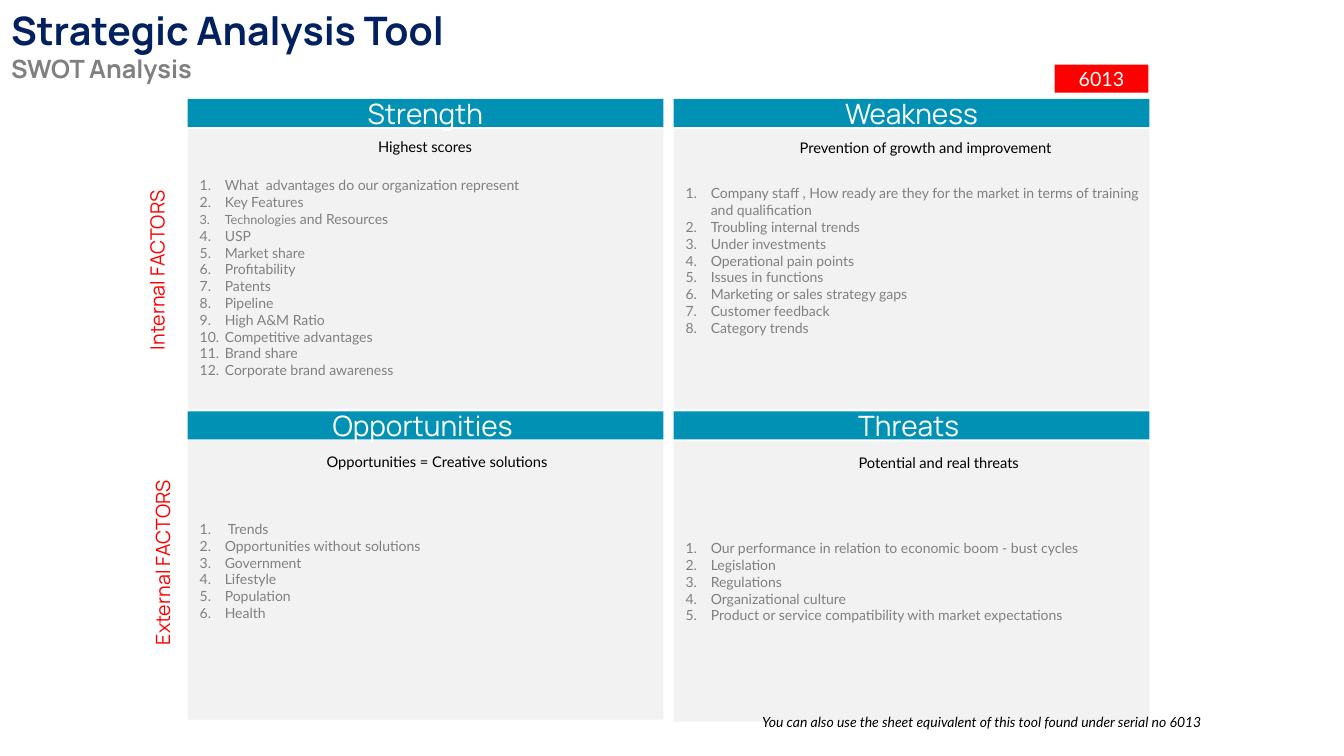
from lxml import etree
from pptx import Presentation
from pptx.dml.color import RGBColor
from pptx.enum import shapes, text
from pptx.oxml.ns import qn
from pptx.util import Inches, Pt

NAVY = RGBColor(0x00, 0x20, 0x60)
TEAL = RGBColor(0x00, 0x91, 0xB5)
RED = RGBColor(0xFF, 0x00, 0x00)
GREY = RGBColor(0x80, 0x80, 0x80)
PALE = RGBColor(0xF2, 0xF2, 0xF2)
WHITE = RGBColor(0xFF, 0xFF, 0xFF)
BLACK = RGBColor(0x00, 0x00, 0x00)

# Content: each quadrant has a heading, a caption and a numbered list
TITLE = [("Strategic Analysis Tool", 28, NAVY), ("SWOT Analysis", 18, GREY)]
SMALL_WORD = "Technologies"
QUADRANTS = [
    {"heading": "Strength", "caption": "Highest scores ",
     "caption_box": (2.12, 1.32, 4.23, 0.29), "panel_top": 1.28, "insets": (0.17, 0),
     "items": ["What  advantages do our organization represent", "Key Features",
               "Technologies and Resources", "USP", "Market share", "Profitability",
               "Patents", "Pipeline", "High A&M Ratio", "Competitive advantages",
               "Brand share", "Corporate brand awareness"]},
    {"heading": "Weakness", "caption": "Prevention of growth and improvement ",
     "caption_box": (6.83, 1.33, 4.74, 0.28), "panel_top": 1.28, "insets": (0, 0.17),
     "items": ["Company staff , How ready are they for the market in terms of "
               "training and qualification", "Troubling internal trends",
               "Under investments", "Operational pain points", "Issues in functions",
               "Marketing or sales strategy gaps", "Customer feedback",
               "Category trends"]},
    {"heading": "Opportunities ", "caption": "Opportunities = Creative solutions ",
     "caption_box": (2.24, 4.44, 4.23, 0.29), "panel_top": 4.36, "insets": (0, 0.17),
     "items": [" Trends", "Opportunities without solutions", "Government",
               "Lifestyle", "Population", "Health"]},
    {"heading": "Threats ", "caption": "Potential and real threats ",
     "caption_box": (6.96, 4.45, 4.74, 0.28), "panel_top": 4.38, "insets": (0, 0),
     "items": ["Our performance in relation to economic boom - bust cycles",
               "Legislation", "Regulations", "Organizational culture",
               "Product or service compatibility with market expectations"]},
]
FACTORS = [("Internal FACTORS ", (0.59, 2.49, 1.93, 0.34)),
           ("External FACTORS", (0.66, 5.41, 1.9, 0.34))]
SERIAL = "6013"
NOTE = "You can also use the sheet equivalent of this tool found under serial no 6013"

# Grid
LEFT, TOP = 1.86, 0.98
COL_STEP, ROW_STEP = 4.82, 3.1
WIDTH, HEAD_H, PANEL_H = 4.72, 0.28, 2.78


def place(sp, box):
    sp.left, sp.top, sp.width, sp.height = map(Inches, box)


def add_run(p, words, size, color, name="Lato", **fmt):
    r = p.add_run()
    r.text = words
    r.font.color.rgb = color
    for key, value in {"size": Pt(size), "name": name, "bold": False, **fmt}.items():
        setattr(r.font, key, value)


def add_label(s, box, words, size, color, fill=None, name="Lato",
              align=text.PP_ALIGN.CENTER, wrap=True, **fmt):
    """A line of text, on a filled rectangle when a fill is given."""
    if fill is None:
        sp = s.shapes.add_textbox(*map(Inches, box))
    else:
        sp = s.shapes.add_shape(shapes.MSO_SHAPE.RECTANGLE, *map(Inches, box))
        sp.shadow.inherit = False
        sp.fill.solid()
        sp.fill.fore_color.rgb = fill
        sp.line.fill.background()
    tf = sp.text_frame
    tf.word_wrap = wrap
    p = tf.paragraphs[0]
    p.alignment = align
    add_run(p, words, size, color, name, **fmt)
    return sp


def number(p):
    pPr = p._p.get_or_add_pPr()
    pPr.set("marL", str(Inches(0.25)))
    pPr.set("indent", str(-Inches(0.25)))
    etree.SubElement(pPr, qn("a:buFont"), typeface="Lato")
    etree.SubElement(pPr, qn("a:buAutoNum"), type="arabicPeriod")


def fill_panel(sp, box, items, insets):
    place(sp, box)
    sp.fill.solid()
    sp.fill.fore_color.rgb = PALE
    tf = sp.text_frame
    frame = {"margin_left": Inches(0.12), "margin_right": 0,
             "margin_top": Inches(insets[0]), "margin_bottom": Inches(insets[1]),
             "vertical_anchor": text.MSO_ANCHOR.MIDDLE, "word_wrap": True,
             "auto_size": text.MSO_AUTO_SIZE.NONE}
    for key, value in frame.items():
        setattr(tf, key, value)
    for i, item in enumerate(items):
        p = tf.paragraphs[0] if i == 0 else tf.add_paragraph()
        p.space_before = Pt(0)
        number(p)
        if item.startswith(SMALL_WORD):
            add_run(p, SMALL_WORD, 9, GREY)
            item = item[len(SMALL_WORD):]
        add_run(p, item, 10, GREY)


def main():
    prs = Presentation()
    prs.slide_width, prs.slide_height = Inches(13.33), Inches(7.5)
    s = prs.slides.add_slide(prs.slide_layouts[4])

    # Title and subtitle
    title = s.shapes.title
    place(title, (0.01, 0.01, 10.42, 0.88))
    tf = title.text_frame
    tf.vertical_anchor = text.MSO_ANCHOR.TOP
    tf.auto_size = text.MSO_AUTO_SIZE.NONE
    for i, (words, size, color) in enumerate(TITLE):
        p = tf.paragraphs[0] if i == 0 else tf.add_paragraph()
        p.alignment = text.PP_ALIGN.LEFT
        add_run(p, words, size, color, "Manrope", bold=True)

    # Four quadrants
    bodies = [sp for sp in s.placeholders if sp.placeholder_format.idx > 0]
    for i, (body, quad) in enumerate(zip(bodies, QUADRANTS)):
        row, col = divmod(i, 2)
        x, y = LEFT + col * COL_STEP, TOP + row * ROW_STEP
        fill_panel(body, (x, quad["panel_top"], WIDTH, PANEL_H),
                   quad["items"], quad["insets"])
        add_label(s, (x, y, WIDTH, HEAD_H), quad["heading"], 20, WHITE, TEAL, "Manrope")
        add_label(s, quad["caption_box"], quad["caption"], 10.5, BLACK)

    # Side labels
    for words, box in FACTORS:
        sp = add_label(s, box, words, 14, RED, WHITE, "Manrope", wrap=False)
        sp.rotation = 270

    # Serial number and note
    add_label(s, (10.46, 0.64, 0.93, 0.28), SERIAL, 14, WHITE, RED)
    add_label(s, (7.46, 7.03, 5.19, 0.27), NOTE, 10, BLACK,
              align=text.PP_ALIGN.LEFT, italic=True)

    prs.save("out.pptx")


if __name__ == "__main__":
    main()
